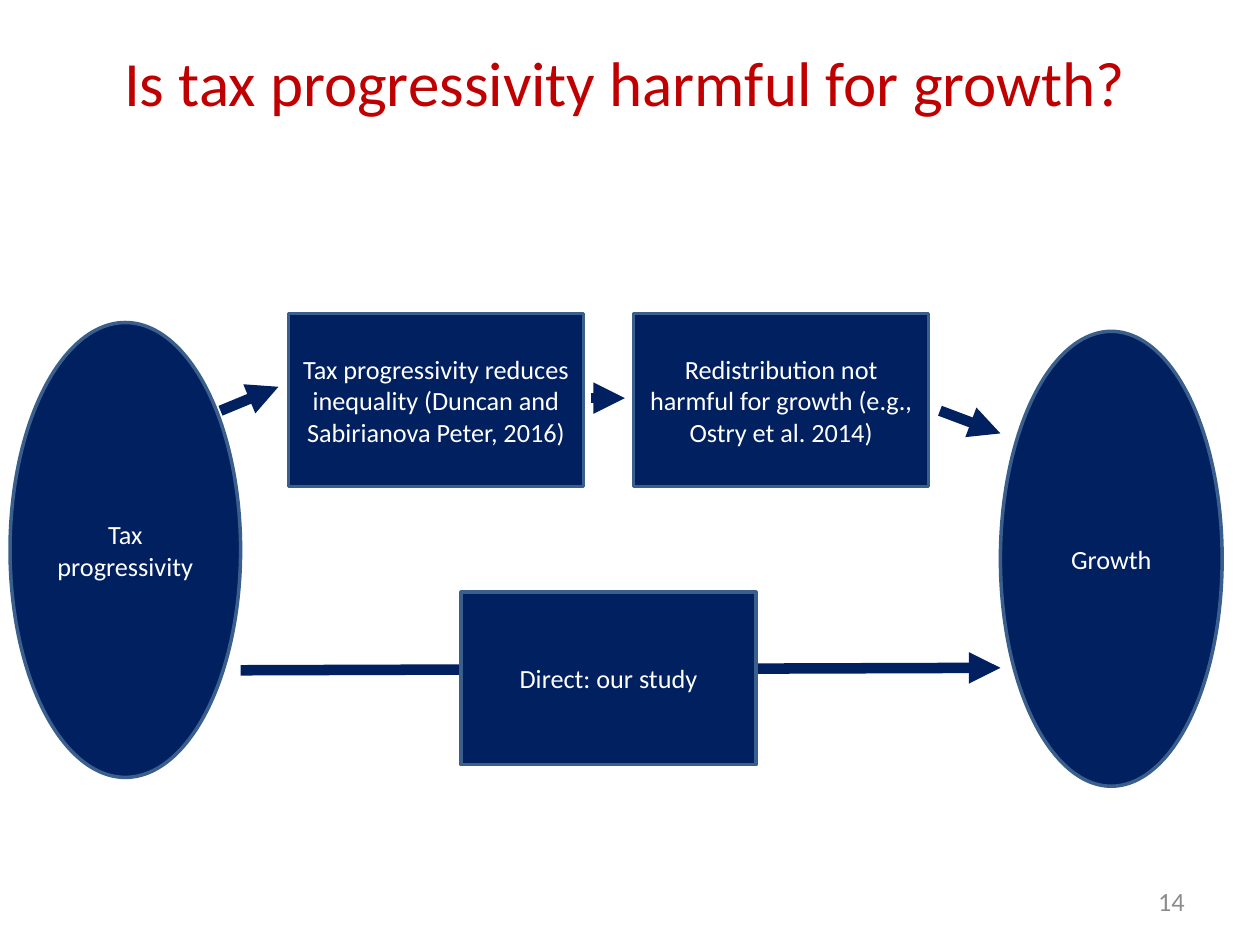
from dataclasses import dataclass

from lxml.etree import SubElement
from pptx import Presentation
from pptx.dml.color import RGBColor
from pptx.enum.shapes import MSO_CONNECTOR as Connector, MSO_SHAPE as Preset
from pptx.enum.text import MSO_ANCHOR as Anchor, PP_ALIGN as Align
from pptx.oxml.ns import qn
from pptx.slide import Slide
from pptx.util import Pt

COLORS = {
    "title": "C00000",
    "navy": "002060",
    "outline": "3A5F8C",
    "white": "FFFFFF",
    "gray": "8C8C8C",
}


@dataclass
class FlowSlide:
    slide: Slide
    font: str = "Calibri"
    body_size: float = 15
    outline_width: float = 2
    arrow_width: float = 6

    def color(self, name):
        return RGBColor.from_string(COLORS[name])

    def add_words(self, shape, text, size, color, align):
        frame = shape.text_frame
        frame.word_wrap = True
        frame.vertical_anchor = Anchor.MIDDLE
        paragraph = frame.paragraphs[0]
        paragraph.alignment = align
        run = paragraph.add_run()
        run.text = text
        run.font.name = self.font
        run.font.size = Pt(size)
        run.font.color.rgb = self.color(color)

    def text(self, text, box, size, color, align):
        shape = self.slide.shapes.add_textbox(*map(Pt, box))
        self.add_words(shape, text, size, color, align)

    def node(self, preset, text, box):
        shape = self.slide.shapes.add_shape(preset, *map(Pt, box))
        shape.shadow.inherit = False
        shape.fill.solid()
        shape.fill.fore_color.rgb = self.color("navy")
        shape.line.color.rgb = self.color("outline")
        shape.line.width = Pt(self.outline_width)
        self.add_words(shape, text, self.body_size, "white", Align.CENTER)

    def arrow(self, start, end):
        connector = self.slide.shapes.add_connector(
            Connector.STRAIGHT, *map(Pt, start + end))
        connector.line.color.rgb = self.color("navy")
        connector.line.width = Pt(self.arrow_width)
        properties = connector._element.spPr
        SubElement(properties.find(qn("a:ln")), qn("a:tailEnd"), type="triangle")
        SubElement(properties, qn("a:effectLst"))


def main():
    presentation = Presentation()
    presentation.slide_width = Pt(720)
    presentation.slide_height = Pt(540)
    flow = FlowSlide(presentation.slides.add_slide(presentation.slide_layouts[6]))

    flow.text("14", (516.24, 500.4, 167.76, 28.8), 15, "gray", Align.RIGHT)
    flow.text("Is tax progressivity harmful for growth?",
              (33.12, 1.44, 648, 90), 36, "title", Align.CENTER)

    step_size = (168.48, 98.64)
    step_top = 179.28
    oval_height = 259.92
    growth_left = 571.68

    flow.node(Preset.RECTANGLE,
              "Redistribution not harmful for growth (e.g., Ostry et al. 2014)",
              (362.16, step_top, *step_size))
    flow.node(Preset.RECTANGLE,
              "Tax progressivity reduces inequality (Duncan and Sabirianova Peter, 2016)",
              (164.88, step_top, *step_size))
    flow.node(Preset.OVAL, "Growth", (growth_left, 189.36, 126.72, oval_height))
    flow.node(Preset.OVAL, "Tax progressivity", (5.76, 184.32, 131.76, oval_height))

    for start, end in (
        ((126, 234.72), (159.12, 221.04)),
        ((337.68, 227.52), (357.12, 227.52)),
        ((537.12, 234.72), (growth_left, 247.68)),
        ((137.52, 383.04), (growth_left, 381.6)),
    ):
        flow.arrow(start, end)

    flow.node(Preset.RECTANGLE, "Direct: our study", (263.52, 338.4, *step_size))
    presentation.save("out.pptx")


if __name__ == "__main__":
    main()
